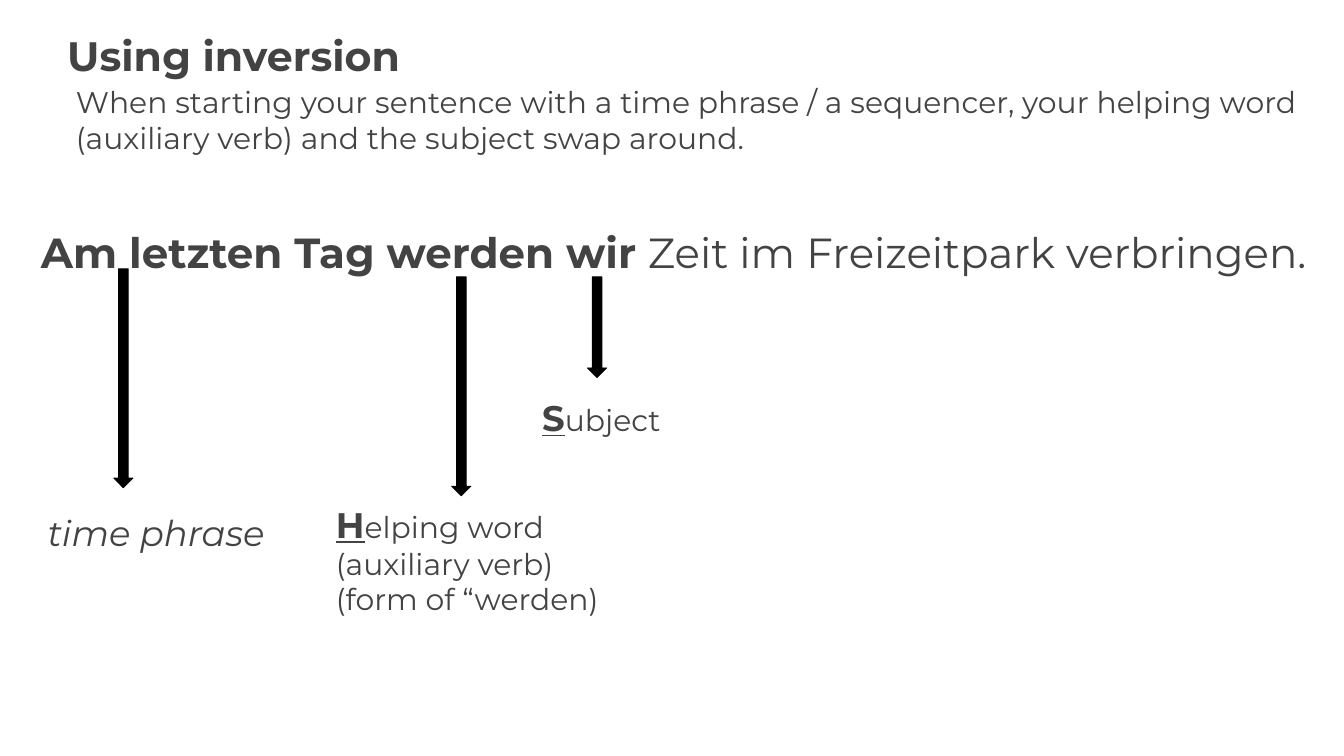
import pptx
import pptx.util
import pptx.dml.color
import pptx.enum.shapes
import pptx.enum.text
from pptx.util import Inches

COLOURS = {"text": "434343", "arrow": "000000"}
FONT = "Montserrat"


def colour(name):
    return pptx.dml.color.RGBColor.from_string(COLOURS[name])


def write(shape, runs, inset=0.1, line_spacing=None):
    """Fill a shape with one paragraph; each run is (text, size, styles)."""
    frame = shape.text_frame
    frame.word_wrap = True
    frame.auto_size = pptx.enum.text.MSO_AUTO_SIZE.NONE
    frame.vertical_anchor = pptx.enum.text.MSO_ANCHOR.TOP
    frame.margin_left = frame.margin_right = Inches(inset)
    frame.margin_top = frame.margin_bottom = Inches(inset)
    para = frame.paragraphs[0]
    para.alignment = pptx.enum.text.PP_ALIGN.LEFT
    if line_spacing:
        para.line_spacing = line_spacing
    for text, size, styles in runs:
        span = para.add_run()
        span.text = text
        span.font.name = FONT
        span.font.size = pptx.util.Pt(size)
        span.font.color.rgb = colour("text")
        span.font.bold = "b" in styles
        span.font.italic = "i" in styles
        span.font.underline = "u" in styles


def add_text(page, box, runs, **options):
    shape = page.shapes.add_textbox(*map(Inches, box))
    write(shape, runs, **options)


def add_heading(page, left, top):
    title = page.shapes.title
    title.left, title.top = Inches(left), Inches(top)
    title.width, title.height = Inches(8.64), Inches(1.78)
    write(title, [("Using inversion", 44, "b")], inset=0, line_spacing=1.15)
    rule = ("When starting your sentence with a time phrase / a sequencer, "
            "your helping word (auxiliary verb) and the subject swap around.")
    add_text(page, (left + 0.03, top + 0.81, 18.61, 1.5), [(rule, 32, "")])


def add_sentence(page, left, top):
    add_text(page, (left, top, 19.39, 1.2),
             [("Am letzten Tag werden wir ", 45, "b"),
              ("Zeit im Freizeitpark verbringen.", 45, "")],
             inset=0, line_spacing=1.3)


def add_callout(page, arrow_box, label_box, runs):
    """Draw an arrow down from a part of the sentence and name that part."""
    arrow = page.shapes.add_shape(pptx.enum.shapes.MSO_SHAPE.DOWN_ARROW,
                                  *map(Inches, arrow_box))
    arrow.shadow.inherit = False
    arrow.fill.solid()
    arrow.fill.fore_color.rgb = colour("arrow")
    arrow.line.color.rgb = colour("arrow")
    arrow.line.width = pptx.util.Pt(0.75)
    add_text(page, label_box, runs)


def main():
    deck = pptx.Presentation()
    deck.slide_width, deck.slide_height = Inches(20), Inches(11.25)
    page = deck.slides.add_slide(deck.slide_layouts[5])

    add_heading(page, 1, 0.34)
    add_sentence(page, 0.61, 3.15)

    callouts = [
        ((8.74, 4.12, 0.29, 1.5), (7.97, 5.8, 2.62, 1.22),
         [("S", 38, "bu"), ("ubject", 32, "")]),
        ((6.72, 4.12, 0.29, 3.26), (4.9, 7.38, 4.12, 1.22),
         [("H", 38, "bu"),
          ("elping word (auxiliary verb) (form of “werden)", 32, "")]),
        ((1.69, 4, 0.29, 3.26), (0.61, 7.5, 3.56, 1.22),
         [("time phrase", 38, "i")]),
    ]
    for arrow_box, label_box, runs in callouts:
        add_callout(page, arrow_box, label_box, runs)

    deck.save("out.pptx")


if __name__ == "__main__":
    main()
